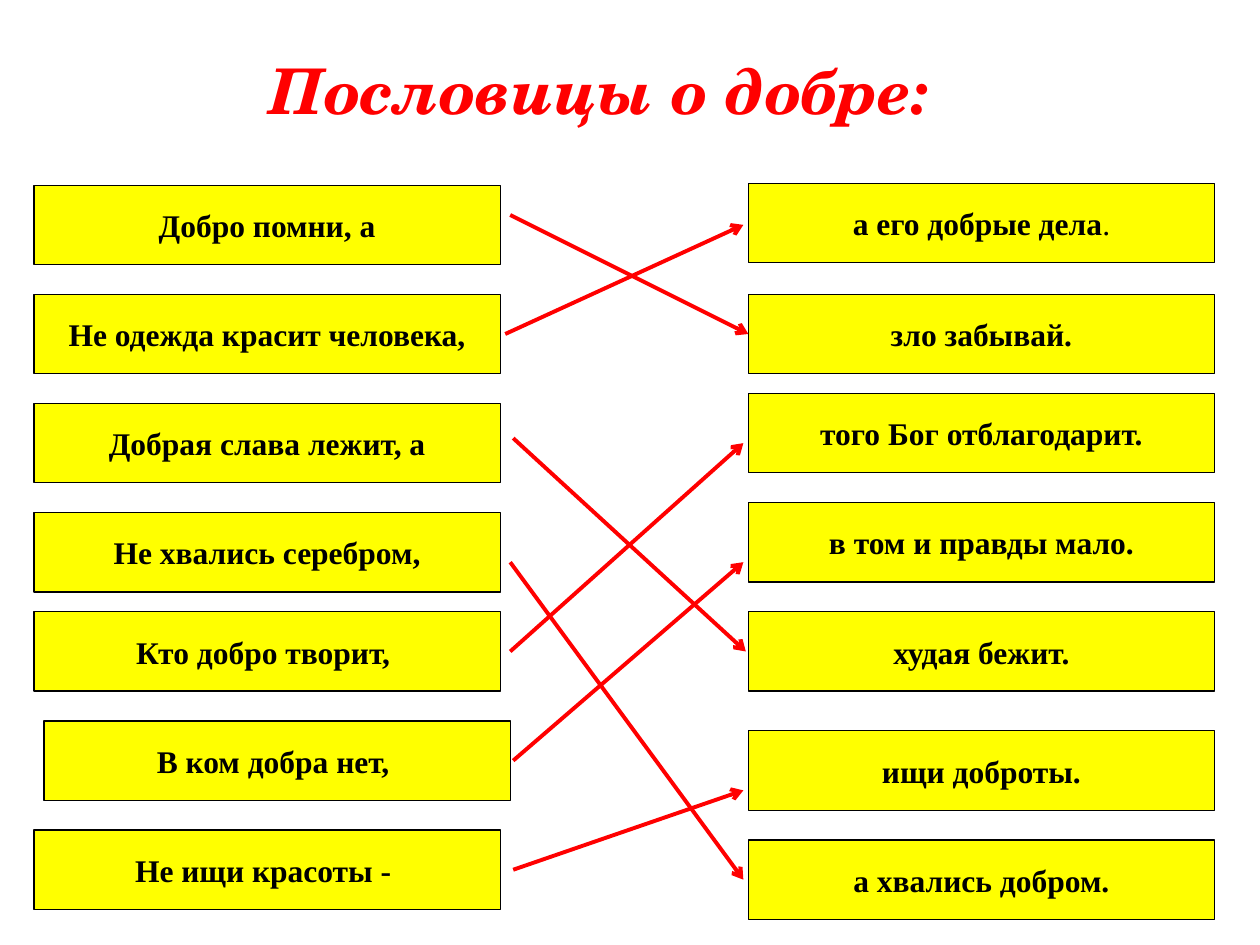
import pptx
import pptx.dml.color
import pptx.enum.shapes
import pptx.enum.text
import pptx.oxml.ns
import pptx.util
from lxml import etree

COLORS = {"red": "FF0000", "yellow": "FFFF00", "black": "000000"}
UNIT = pptx.util.Mm(2)
LEFT, TOP = pptx.util.Inches(0.27), pptx.util.Inches(1.47)
BOX_COLS, BOX_ROWS, RIGHT_COL = 47, 8, 72

BEGINNINGS = [
    (0, 0, "Добро помни, а"),
    (0, 11, "Не одежда красит человека,"),
    (0, 22, "Добрая слава лежит, а"),
    (0, 33, "Не хвались серебром,"),
    (0, 43, "Кто добро творит, "),
    (1, 54, "В ком добра нет, "),
    (0, 65, "Не ищи красоты - "),
]
ENDINGS = [
    (RIGHT_COL, -0.2, "а его добрые дела", "."),
    (RIGHT_COL, 11, "зло забывай."),
    (RIGHT_COL, 21, "того Бог отблагодарит."),
    (RIGHT_COL, 32, "в том и правды мало."),
    (RIGHT_COL, 43, "худая бежит."),
    (RIGHT_COL, 55, "ищи доброты."),
    (RIGHT_COL, 66, "а хвались добром."),
]
ARROWS = [
    (48, 3, 72, 15),
    (47.5, 15, 71.5, 4),
    (48, 38, 71.5, 70),
    (48.3, 25.5, 71.75, 47),
    (48, 47, 71.5, 26),
    (48.3, 58, 71.5, 38),
    (48.3, 69, 71.5, 61),
]


def rgb(name):
    """Return the named colour."""
    return pptx.dml.color.RGBColor.from_string(COLORS[name])


def place(col, row):
    """Return the slide position of a grid point."""
    return int(LEFT + col * UNIT), int(TOP + row * UNIT)


def style(p, font, size, color):
    """Centre a paragraph and set its font."""
    p.alignment = pptx.enum.text.PP_ALIGN.CENTER
    p.font.name = font
    p.font.size = pptx.util.Pt(size)
    p.font.color.rgb = rgb(color)


def add_title(s, prs, text):
    """Add the slide heading."""
    w, h = prs.slide_width, prs.slide_height
    sp = s.shapes.add_textbox(
        int(w * 0.098), int(h * 0.048), int(w * 0.756), int(h * 0.116))
    tf = sp.text_frame
    tf.word_wrap = False
    p = tf.paragraphs[0]
    p.text = text
    style(p, "TeX Gyre Schola", 36, "red")
    p.font.bold = True
    p.font.italic = True


def add_box(s, col, row, text, ending=""):
    """Add a proverb half, with an optional ending that is not bold."""
    sp = s.shapes.add_shape(
        pptx.enum.shapes.MSO_SHAPE.RECTANGLE, *place(col, row),
        BOX_COLS * UNIT, BOX_ROWS * UNIT)
    sp.shadow.inherit = False
    sp.fill.solid()
    sp.fill.fore_color.rgb = rgb("yellow")
    sp.line.color.rgb = rgb("black")
    sp.line.width = pptx.util.Pt(0.75)
    tf = sp.text_frame
    tf.word_wrap = False
    tf.vertical_anchor = pptx.enum.text.MSO_ANCHOR.MIDDLE
    p = tf.paragraphs[0]
    style(p, "Times New Roman", 18, "black")
    p.font.bold = True
    p.add_run().text = text
    if ending:
        r = p.add_run()
        r.text = ending
        r.font.bold = False


def add_arrow(s, col, row, end_col, end_row):
    """Add an arrow from a beginning to its ending."""
    sp = s.shapes.add_connector(
        pptx.enum.shapes.MSO_CONNECTOR.STRAIGHT,
        *place(col, row), *place(end_col, end_row))
    sp.line.color.rgb = rgb("red")
    sp.line.width = pptx.util.Pt(2.25)
    qn = pptx.oxml.ns.qn
    etree.SubElement(sp.line._get_or_add_ln(), qn("a:tailEnd"), type="arrow")
    etree.SubElement(sp._element.spPr, qn("a:effectLst"))


def main():
    """Build the slide and save it."""
    prs = pptx.Presentation()
    prs.slide_width = pptx.util.Inches(10)
    prs.slide_height = pptx.util.Inches(7.5)
    s = prs.slides.add_slide(prs.slide_layouts[6])
    add_title(s, prs, "Пословицы о добре:")
    for box in BEGINNINGS + ENDINGS:
        add_box(s, *box)
    for arrow in ARROWS:
        add_arrow(s, *arrow)
    prs.save("out.pptx")


if __name__ == "__main__":
    main()
